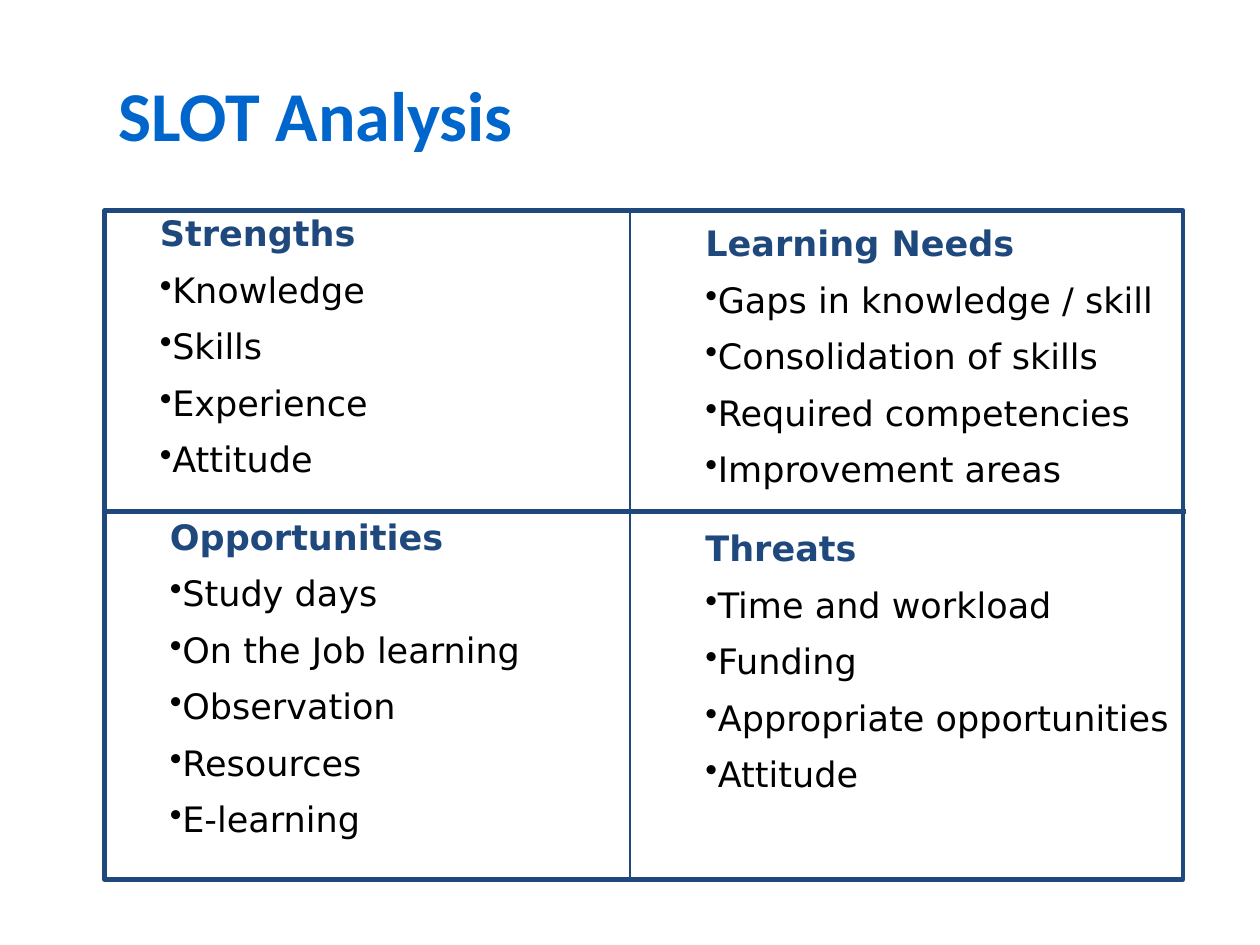
from lxml import etree
from pptx import Presentation
from pptx.dml.color import RGBColor
from pptx.enum import shapes, text
from pptx.oxml import ns
from pptx.util import Inches, Pt

NAVY = RGBColor(0x1F, 0x49, 0x7D)
BLUE = RGBColor(0x00, 0x66, 0xCC)
BLACK = RGBColor(0, 0, 0)

TITLE = "SLOT Analysis"
QUADRANTS = [
    ("Strengths", (1.17, 1.67, 1.89, 2.29),
     ["Knowledge", "Skills", "Experience", "Attitude"]),
    ("Learning Needs", (5.5, 1.75, 3.88, 2.29),
     ["Gaps in knowledge / skill", "Consolidation of skills",
      "Required competencies", "Improvement areas"]),
    ("Opportunities", (1.25, 4.08, 3.11, 2.76),
     ["Study days", "On the Job learning", "Observation", "Resources", "E-learning"]),
    ("Threats", (5.5, 4.17, 3.95, 2.29),
     ["Time and workload", "Funding", "Appropriate opportunities", "Attitude"]),
]

LEFT, TOP, WIDTH, HEIGHT = 0.83, 1.67, 8.56, 5.31
DIVIDERS = [
    ((LEFT, 4.06, 9.41, 4.06), 2.5),
    ((5, TOP, 5, TOP + HEIGHT), 0.75),
]
TITLE_FONT = dict(name="Calibri", size=Pt(40), bold=True)
HEADING_FONT = dict(name="DejaVu Sans", size=Pt(20), bold=True)
ITEM_FONT = dict(HEADING_FONT, bold=False)


def inches(values):
    return [Inches(value) for value in values]


def write(para, words, font, color):
    span = para.add_run()
    span.text = words
    for name, value in font.items():
        setattr(span.font, name, value)
    span.font.color.rgb = color


def add_bullet(para):
    props = para._p.get_or_add_pPr()
    props.set("marL", "0")
    props.set("indent", "0")
    etree.SubElement(props, ns.qn("a:buChar")).set("char", "•")


def add_frame(page):
    frame = page.shapes.add_shape(
        shapes.MSO_SHAPE.RECTANGLE, *inches((LEFT, TOP, WIDTH, HEIGHT)))
    frame.shadow.inherit = False
    frame.fill.background()
    frame.line.color.rgb = NAVY
    frame.line.width = Pt(2.5)


def add_divider(page, ends, weight):
    divider = page.shapes.add_connector(shapes.MSO_CONNECTOR.STRAIGHT, *inches(ends))
    divider.line.color.rgb = NAVY
    divider.line.width = Pt(weight)
    etree.SubElement(divider._element.spPr, ns.qn("a:effectLst"))


def add_title(page):
    box = page.shapes.add_textbox(*inches((0.84, 0.52, 8.5, 1.25)))
    box.text_frame.word_wrap = True
    write(box.text_frame.paragraphs[0], TITLE, TITLE_FONT, BLUE)


def add_quadrant(page, heading, place, items):
    frame = page.shapes.add_textbox(*inches(place)).text_frame
    frame.word_wrap = False
    frame.auto_size = text.MSO_AUTO_SIZE.SHAPE_TO_FIT_TEXT
    para = frame.paragraphs[0]
    para.line_spacing = 0.9
    write(para, heading, HEADING_FONT, NAVY)
    for item in items:
        para = frame.add_paragraph()
        para.line_spacing = 0.9
        para.space_before = Pt(10.7)
        add_bullet(para)
        write(para, item, ITEM_FONT, BLACK)


def main():
    deck = Presentation()
    deck.slide_width, deck.slide_height = inches((10, 7.5))
    page = deck.slides.add_slide(deck.slide_layouts[6])
    add_frame(page)
    for ends, weight in DIVIDERS:
        add_divider(page, ends, weight)
    add_title(page)
    for heading, place, items in QUADRANTS:
        add_quadrant(page, heading, place, items)
    deck.save("out.pptx")


if __name__ == "__main__":
    main()
